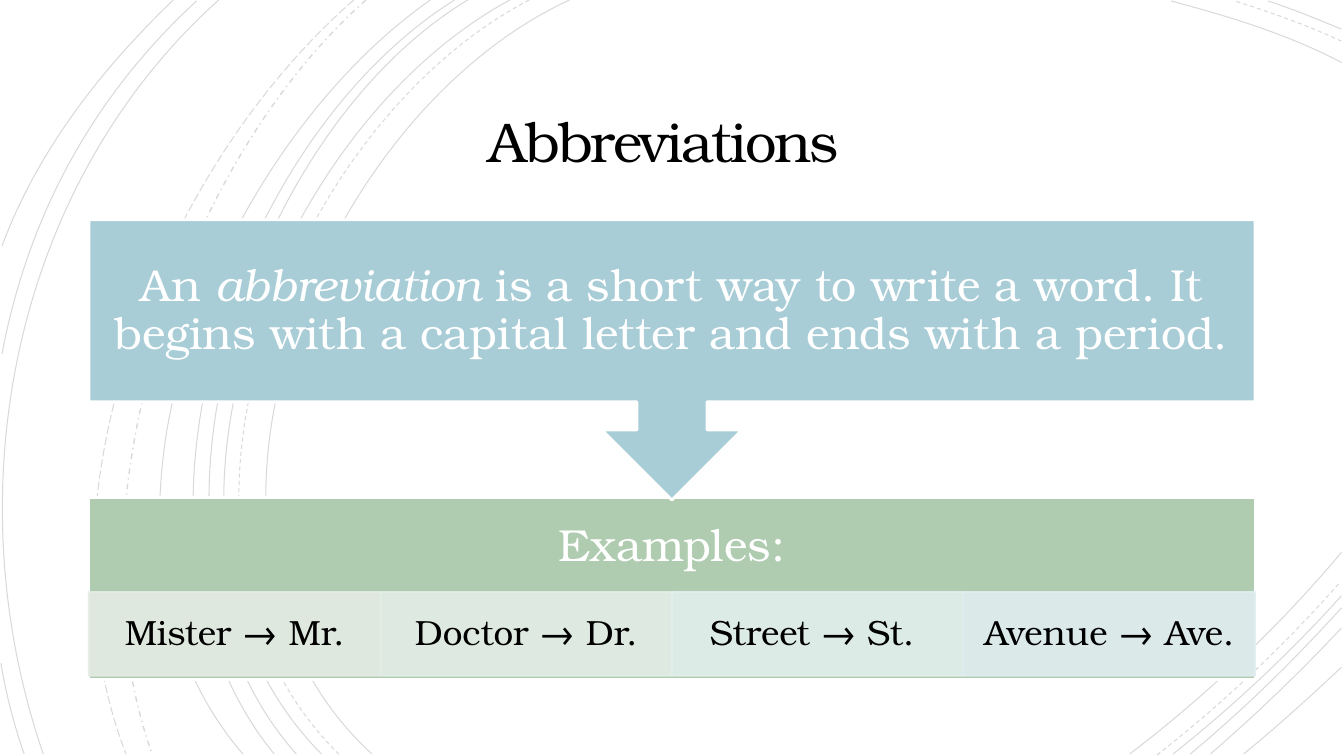
"""Build a slide that explains abbreviations and gives four examples."""
from lxml.etree import SubElement
from pptx import Presentation
from pptx.dml.color import RGBColor
from pptx.enum.dml import MSO_LINE
from pptx.enum.shapes import MSO_SHAPE
from pptx.enum.text import MSO_ANCHOR, MSO_AUTO_SIZE, PP_ALIGN
from pptx.oxml.ns import qn
from pptx.util import Cm, Pt

FONT = "TeX Gyre Bonum"
CM_PER_INCH = 2.54


def style(shape, fill, line, width, opacity=100):
    shape.shadow.inherit = False
    if fill:
        shape.fill.solid()
        shape.fill.fore_color.rgb = RGBColor.from_string(fill)
    else:
        shape.fill.background()
    shape.line.color.rgb = RGBColor.from_string(line)
    shape.line.width = Pt(width)
    if opacity < 100:
        for colour in shape._element.spPr.iter(qn("a:srgbClr")):
            SubElement(colour, qn("a:alpha"), val=str(opacity * 1000))


def write(shape, runs, size, colour, inset_x, inset_y, spacing=0.9):
    frame = shape.text_frame
    frame.word_wrap = True
    frame.auto_size = MSO_AUTO_SIZE.NONE
    frame.vertical_anchor = MSO_ANCHOR.MIDDLE
    frame.margin_left = frame.margin_right = Cm(inset_x)
    frame.margin_top = frame.margin_bottom = Cm(inset_y)
    paragraph = frame.paragraphs[0]
    paragraph.alignment = PP_ALIGN.CENTER
    paragraph.line_spacing = spacing
    for text, italic in runs:
        run = paragraph.add_run()
        run.text = text
        run.font.name = FONT
        run.font.size = Pt(size)
        run.font.italic = italic
        run.font.color.rgb = RGBColor.from_string(colour)


deck = Presentation()
deck.slide_width, deck.slide_height = Cm(33.87), Cm(19.05)
slide = deck.slides.add_slide(deck.slide_layouts[5])
shapes = slide.shapes

arcs = {
    MSO_LINE.SOLID: [
        [(5.65, 0), (3.15, 1.15), (1.43, 5.4), (3.69, 7.48)],
        [(13.31, 0.62), (12.78, 0.34), (12.18, 0.16), (11.62, 0.01)],
        [(11.21, 7.48), (11.97, 6.9), (12.69, 6.22), (13.31, 5.48)],
        [(5.06, 0), (2.7, 1.27), (1.1, 5.37), (3.19, 7.48)],
        [(13.31, 0.29), (13.07, 0.19), (12.83, 0.09), (12.58, 0.01)],
        [(11.64, 7.48), (12.23, 7.01), (12.8, 6.48), (13.31, 5.91)],
        [(4.64, 0), (2.44, 1.33), (1.1, 5.41), (2.94, 7.48)],
        [(11.81, 7.48), (12.34, 7.04), (12.84, 6.55), (13.31, 6.03)],
        [(4.51, 0), (2.31, 1.38), (0.97, 5.33), (2.72, 7.48)],
        [(12.01, 7.48), (12.46, 7.09), (12.9, 6.67), (13.31, 6.23)],
        [(4.27, 0), (2.17, 1.47), (0.53, 5.29), (2.41, 7.48)],
        [(12.34, 7.48), (12.67, 7.21), (12.99, 6.92), (13.31, 6.62)],
        [(2.17, 0), (0.11, 1.85), (-0.46, 4.9), (0.43, 7.48)],
        [(1.95, 0.01), (0.92, 0.96), (0.28, 2.14), (0.02, 3.51)],
        [(0.01, 6.58), (0.06, 6.89), (0.14, 7.19), (0.24, 7.48)],
        [(1.72, 0), (1, 0.69), (0.37, 1.5), (0.02, 2.44)],
    ],
    MSO_LINE.DASH: [
        [(5.25, 0), (2.85, 1.25), (1.23, 5.37), (3.36, 7.48)],
        [(13.31, 0.41), (12.97, 0.25), (12.6, 0.12), (12.25, 0.01)],
        [(11.48, 7.49), (12.13, 6.98), (12.75, 6.4), (13.3, 5.77)],
    ],
    MSO_LINE.DASH_DOT: [[(3.63, 0), (1.76, 1.66), (0.65, 5.09), (1.51, 7.48)]],
    MSO_LINE.LONG_DASH: [[(3.51, 0), (1.57, 1.69), (0.29, 4.99), (1.25, 7.48)]],
}
for dash, group in arcs.items():
    for arc in group:
        start, *bends = [(Cm(x * CM_PER_INCH), Cm(y * CM_PER_INCH)) for x, y in arc]
        outline = shapes.build_freeform(*start)
        outline.add_line_segments(bends, close=False)
        ring = outline.convert_to_shape()
        route = next(ring._element.iter(qn("a:path")))
        curve = SubElement(route, qn("a:cubicBezTo"))
        for segment in route.findall(qn("a:lnTo")):
            curve.append(segment[0])
            route.remove(segment)
        style(ring, None, "000000", 1 if dash == MSO_LINE.DASH_DOT else 0.75, 15)
        ring.line.dash_style = dash

heading = shapes.title
heading.left, heading.top, heading.width, heading.height = Cm(4.88), Cm(2.21), Cm(24.1), Cm(2.92)
write(heading, [("Abbreviations ", False)], 40, "000000", 0.64, 0.64, 0.85)
heading.text_frame.paragraphs[0].runs[0].font._element.set("spc", "-150")

left, width = 2.24, 29.39
examples = shapes.add_shape(MSO_SHAPE.RECTANGLE, Cm(left), Cm(12.53), Cm(width), Cm(4.6))
style(examples, "B0CCB0", "FFFFFF", 2)
write(examples, [("Examples:", False)], 32, "FFFFFF", 0.64, 0.64)
examples.text_frame.margin_bottom = Cm(2.75)

pairs = [
    ("Mister → Mr.", "E4ECE4"),
    ("Doctor → Dr.", "E3EEE7"),
    ("Street → St. ", "E2EFED"),
    ("Avenue → Ave.", "E1EDF0"),
]
pair_width = width / len(pairs)
for index, (pair, tint) in enumerate(pairs):
    example = shapes.add_shape(
        MSO_SHAPE.RECTANGLE, Cm(left + index * pair_width), Cm(14.92), Cm(pair_width), Cm(2.11))
    style(example, tint, tint, 1.25, 90)
    write(example, [(pair, False)], 25, "000000", 0.48, 0.08)

definition = shapes.add_shape(
    MSO_SHAPE.DOWN_ARROW_CALLOUT, Cm(left), Cm(5.54), Cm(width), Cm(7.06))
style(definition, "A8CDD7", "FFFFFF", 2)
write(definition, [
    ("An ", False),
    ("abbreviation", True),
    (" is a short way to write a word. It begins with a capital letter and ends with a period. ", False),
], 32, "FFFFFF", 0.64, 0.64)

deck.save("out.pptx")
